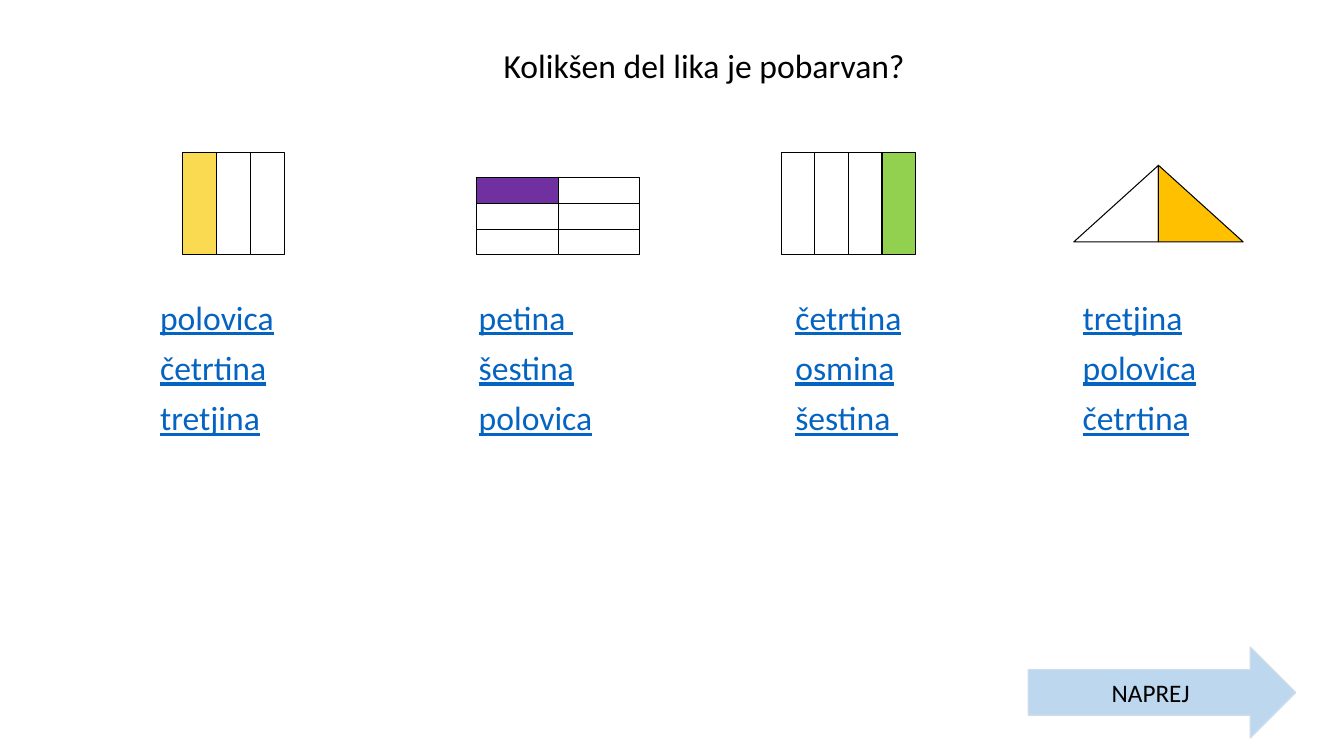
"""Build a quiz slide asking which fraction of each figure is coloured."""
from lxml import etree
from pptx import Presentation
from pptx.dml.color import RGBColor
from pptx.enum.shapes import MSO_SHAPE
from pptx.enum.text import MSO_ANCHOR, PP_ALIGN
from pptx.oxml.ns import qn
from pptx.util import Pt

PX = 9144
BLACK = RGBColor(0x00, 0x00, 0x00)
WHITE = RGBColor(0xFF, 0xFF, 0xFF)
LINK = RGBColor(0x05, 0x63, 0xC1)
YELLOW = RGBColor(0xFA, 0xDA, 0x50)
PURPLE = RGBColor(0x70, 0x30, 0xA0)
GREEN = RGBColor(0x92, 0xD0, 0x50)
ORANGE = RGBColor(0xFF, 0xC0, 0x00)
PALE_BLUE = RGBColor(0xBD, 0xD7, 0xEE)
ARROW_EDGE = RGBColor(0xCC, 0xDC, 0xEA)

QUESTION = "Kolikšen del lika je pobarvan?"
ANSWERS = [
    ("polovica", "petina ", "četrtina", "tretjina"),
    ("četrtina", "šestina", "osmina", "polovica"),
    ("tretjina", "polovica", "šestina ", "četrtina"),
]
TABS = (316, 630, 915)
GRIDS = [
    {"box": (181, 151, 101, 102), "cols": 3, "rows": 1, "marked": 0, "color": YELLOW},
    {"box": (775, 151, 133, 102), "cols": 4, "rows": 1, "marked": 3, "color": GREEN},
    {"box": (473, 176, 161, 77), "cols": 2, "rows": 3, "marked": 0, "color": PURPLE},
]
TRIANGLES = [
    ((1069, 160, 76, 84), 270, WHITE),
    ((1149, 164, 84, 76), 0, ORANGE),
]
ARROW = (1020, 642, 265, 90)
TEXT = {"name": "Calibri", "size": Pt(24)}
PARAGRAPH = {"line_spacing": 0.9, "space_before": Pt(10)}


def emu(box):
    return [round(v * PX) for v in box]


def apply(target, formats):
    for name, value in formats.items():
        setattr(target, name, value)


def add_figure(shapes, kind, box, fill, line=BLACK, width=0.75):
    sp = shapes.add_shape(kind, *emu(box))
    sp.shadow.inherit = False
    sp.fill.solid()
    sp.fill.fore_color.rgb = fill
    sp.line.color.rgb = line
    sp.line.width = Pt(width)
    return sp


def add_run(p, text, color=BLACK, **formats):
    r = p.add_run()
    r.text = text
    apply(r.font, {**TEXT, **formats})
    r.font.color.rgb = color


def add_text_box(s, box):
    tf = s.shapes.add_textbox(*emu(box)).text_frame
    tf.word_wrap = True
    return tf


def add_answers(s):
    tf = add_text_box(s, (149, 294, 1107, 160))
    for i, row in enumerate(ANSWERS):
        p = tf.add_paragraph() if i else tf.paragraphs[0]
        apply(p, PARAGRAPH)
        tabs = etree.SubElement(p._p.get_or_add_pPr(), qn("a:tabLst"))
        for pos in TABS:
            etree.SubElement(tabs, qn("a:tab"), pos=str(pos * PX), algn="l")
        for j, answer in enumerate(row):
            if j:
                add_run(p, "\t")
            add_run(p, answer, LINK, underline=True)


def add_grid(s, box, cols, rows, marked, color):
    left, top, width, height = box
    w, h = width / cols, height / rows
    group = s.shapes.add_group_shape()
    for i in range(cols * rows):
        row, col = divmod(i, cols)
        cell = (left + col * w, top + row * h, w, h)
        add_figure(group.shapes, MSO_SHAPE.RECTANGLE, cell, color if i == marked else WHITE)


def main():
    prs = Presentation()
    prs.slide_width, prs.slide_height = emu((1333, 750))
    s = prs.slides.add_slide(prs.slide_layouts[6])

    p = add_text_box(s, (145, 44, 1107, 50)).paragraphs[0]
    apply(p, {**PARAGRAPH, "alignment": PP_ALIGN.CENTER})
    add_run(p, QUESTION)
    add_answers(s)

    for grid in GRIDS:
        add_grid(s, **grid)
    group = s.shapes.add_group_shape()
    for box, rotation, fill in TRIANGLES:
        sp = add_figure(group.shapes, MSO_SHAPE.RIGHT_TRIANGLE, box, fill)
        sp.rotation = rotation

    sp = add_figure(s.shapes, MSO_SHAPE.RIGHT_ARROW, ARROW, PALE_BLUE, ARROW_EDGE, 1)
    tf = sp.text_frame
    tf.vertical_anchor = MSO_ANCHOR.MIDDLE
    p = tf.paragraphs[0]
    p.alignment = PP_ALIGN.CENTER
    add_run(p, "NAPREJ", size=Pt(18))

    prs.save("out.pptx")


if __name__ == "__main__":
    main()
